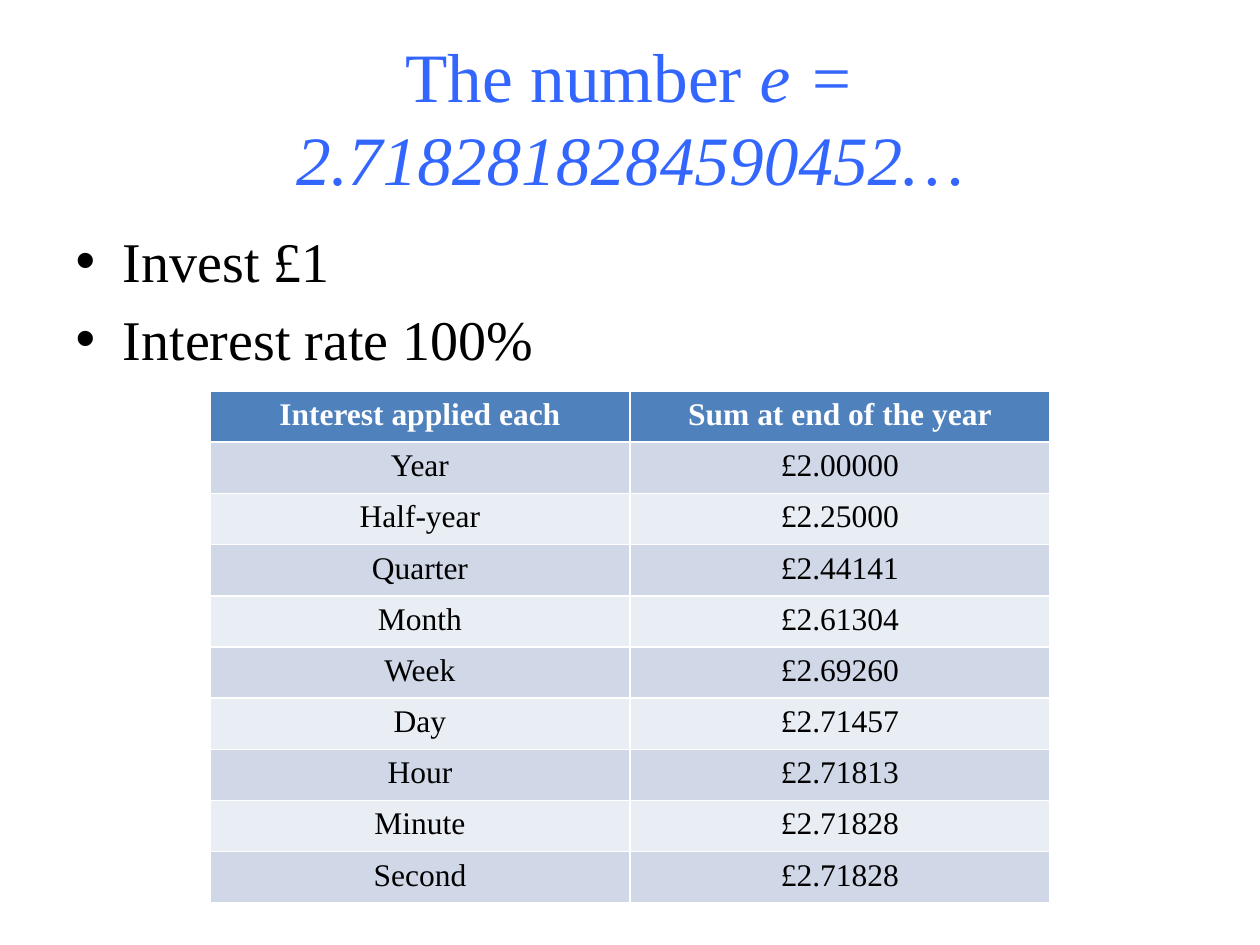
"""Build a slide on the number e with a table of compound interest."""
from pptx import Presentation
from pptx.dml.color import RGBColor
from pptx.enum.text import MSO_ANCHOR, MSO_AUTO_SIZE, PP_ALIGN
from pptx.util import Pt

PX = 914400 / 126
COLORS = {"title": "3366FF", "text": "000000", "head": "4F81BD",
          "white": "FFFFFF", "dark": "D0D8E8", "light": "E9EDF4"}


def px(*nums):
    return [round(num * PX) for num in nums]


def add_run(para, text, color, **style):
    run = para.add_run()
    run.text = text
    run.font.color.rgb = RGBColor.from_string(COLORS[color])
    for name, value in {"name": "Times New Roman", **style}.items():
        setattr(run.font, name, value)


deck = Presentation()
deck.slide_width, deck.slide_height = px(1260, 945)
slide = deck.slides.add_slide(deck.slide_layouts[1])
title, body = slide.placeholders
boxes = [(title, (63, 38, 1134, 157)), (body, (63, 220, 1134, 709))]
for shape, box in boxes:
    shape.left, shape.top, shape.width, shape.height = px(*box)
    shape.text_frame.auto_size = MSO_AUTO_SIZE.NONE

title.text_frame.vertical_anchor = MSO_ANCHOR.MIDDLE
para = title.text_frame.paragraphs[0]
para.alignment = PP_ALIGN.CENTER
add_run(para, "The number ", "title", size=Pt(39.6))
add_run(para, "e = 2.7182818284590452…", "title", size=Pt(39.6), italic=True)

frame = body.text_frame
for i, text in enumerate(["Invest £1", "Interest rate 100%"]):
    para = frame.add_paragraph() if i else frame.paragraphs[0]
    add_run(para, text, "text", size=Pt(32))

rows = [
    ("Interest applied each", "Sum at end of the year"),
    ("Year", "£2.00000"),
    ("Half-year", "£2.25000"),
    ("Quarter", "£2.44141"),
    ("Month", "£2.61304"),
    ("Week", "£2.69260"),
    ("Day", "£2.71457"),
    ("Hour", "£2.71813"),
    ("Minute", "£2.71828"),
    ("Second", "£2.71828"),
]
grid = slide.shapes.add_table(len(rows), 2, *px(210, 391, 840, 512)).table
for i, row in enumerate(rows):
    fill = "dark" if i % 2 else "light"
    color = "text"
    if i == 0:
        fill, color = "head", "white"
    for j, text in enumerate(row):
        cell = grid.cell(i, j)
        cell.fill.solid()
        cell.fill.fore_color.rgb = RGBColor.from_string(COLORS[fill])
        para = cell.text_frame.paragraphs[0]
        para.alignment = PP_ALIGN.CENTER
        add_run(para, text, color, size=Pt(18), bold=i == 0)

deck.save("out.pptx")
